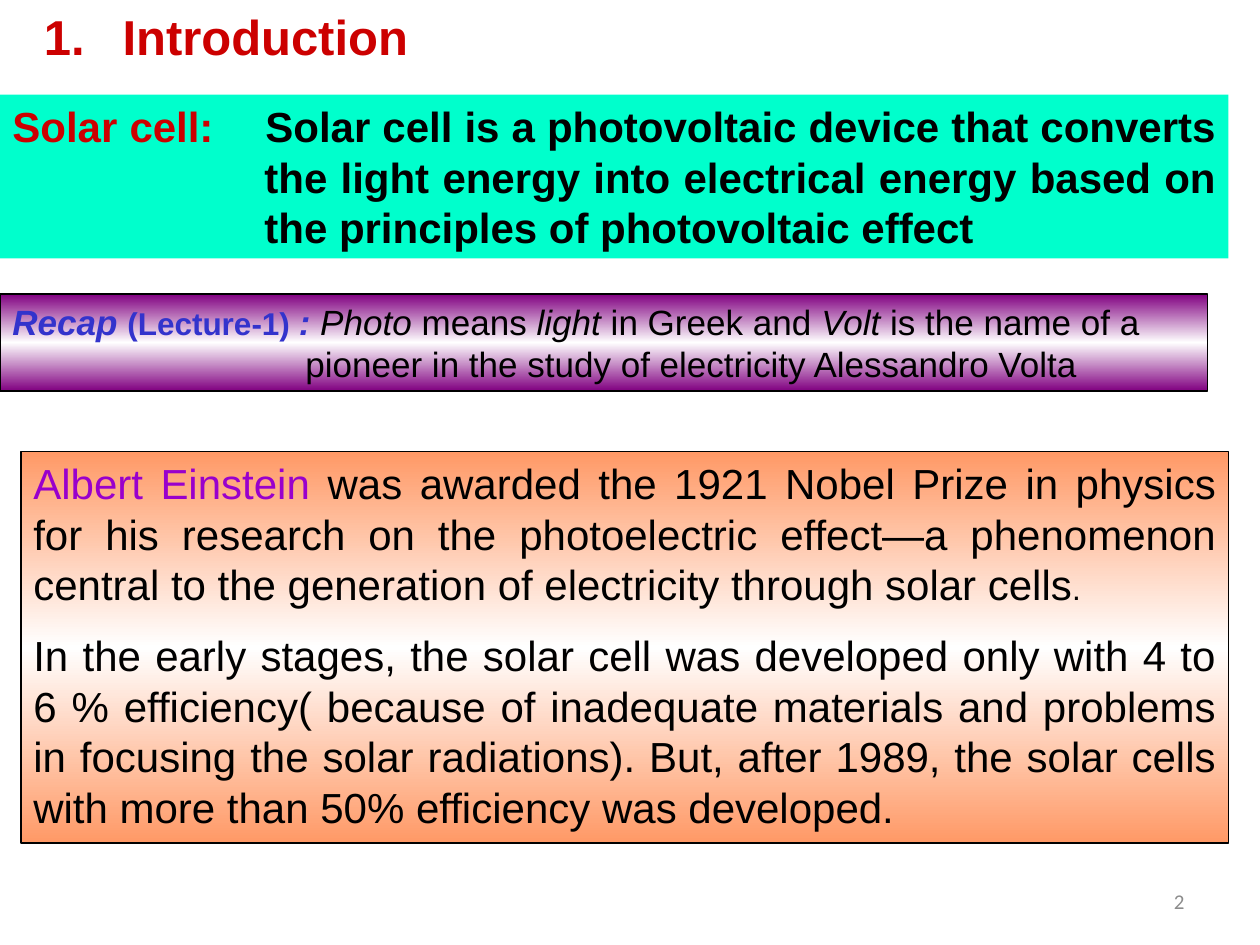
import copy

import pptx
import pptx.dml.color
import pptx.enum.shapes
import pptx.enum.text
import pptx.oxml.ns
import pptx.util

Pt = pptx.util.Pt
ALIGN = pptx.enum.text.PP_ALIGN
ANCHOR = pptx.enum.text.MSO_ANCHOR
AUTO = pptx.enum.text.MSO_AUTO_SIZE
RECT = pptx.enum.shapes.MSO_SHAPE.RECTANGLE

BLACK, RED, BLUE, PURPLE = "000000", "CC0000", "3333CC", "9900CC"


def rgb(value):
    return pptx.dml.color.RGBColor.from_string(value)


def set_gradient(s, edge, middle):
    """Fill from edge to middle and back to edge, top to bottom."""
    s.fill.gradient()
    s.fill.gradient_angle = 270
    stops = s._element.spPr.find(".//" + pptx.oxml.ns.qn("a:gsLst"))
    stops.append(copy.deepcopy(stops[-1]))
    for stop, place, color in zip(s.fill.gradient_stops, (0, 0.5, 1), (edge, middle, edge)):
        stop.position = place
        stop.color.rgb = rgb(color)


def add_box(slide, place, fill=None, gradient=None):
    s = slide.shapes.add_shape(RECT, *map(Pt, place))
    s.shadow.inherit = False
    if gradient:
        set_gradient(s, *gradient)
        s.line.color.rgb = rgb(BLACK)
        s.line.width = Pt(0.75)
    else:
        s.fill.solid()
        s.fill.fore_color.rgb = rgb(fill)
        s.line.fill.background()
    return s


def add_label(slide, place):
    return slide.shapes.add_textbox(*map(Pt, place))


def set_frame(s, anchor=ANCHOR.TOP, auto_size=AUTO.SHAPE_TO_FIT_TEXT):
    tf = s.text_frame
    for name, value in dict(word_wrap=True, vertical_anchor=anchor, auto_size=auto_size).items():
        setattr(tf, name, value)
    return tf


def write(p, runs, align=ALIGN.LEFT, hanging=0, before=0, **base):
    """Write (text, changes) runs; base holds the format they share."""
    p.alignment = align
    p.space_before = Pt(before)
    if hanging:
        pPr = p._p.get_or_add_pPr()
        pPr.set("marL", str(Pt(hanging)))
        pPr.set("indent", str(-Pt(hanging)))
    for text, changes in runs:
        r = p.add_run()
        r.text = text
        look = {"name": "Arial", "color": BLACK, **base, **changes}
        r.font.color.rgb = rgb(look.pop("color"))
        look["size"] = Pt(look["size"])
        for name, value in look.items():
            setattr(r.font, name, value)


def main():
    prs = pptx.Presentation()
    prs.slide_width, prs.slide_height = Pt(720), Pt(540)
    slide = prs.slides.add_slide(prs.slide_layouts[6])

    # Slide number
    tf = set_frame(add_label(slide, (516, 500.5, 168, 28.75)), ANCHOR.MIDDLE, AUTO.NONE)
    write(tf.paragraphs[0], [("2", {})], ALIGN.RIGHT, name="Calibri", size=12, color="8C8C8C")

    # Recap
    recap = add_box(slide, (0, 168, 690, 55.5), gradient=("800080", "FFFFFF"))
    tf = set_frame(recap, ANCHOR.MIDDLE)
    lead = {"color": BLUE, "bold": True}
    italic = {"italic": True}
    write(tf.paragraphs[0], [
        ("Recap ", {**lead, **italic}),
        ("(Lecture-1) ", {**lead, "size": 18}),
        (":", {**lead, **italic}),
        (" Photo", italic),
        (" means ", {}),
        ("light", italic),
        (" in Greek and ", {}),
        ("Volt ", italic),
        ("is the name of a pioneer in the study of electricity Alessandro Volta", {}),
    ], hanging=167.5, size=20, bold=False, italic=False)

    # Definition
    tf = set_frame(add_box(slide, (0, 54, 702, 93.75), fill="00FFCC"))
    write(tf.paragraphs[0], [
        ("Solar cell: \t", {"color": RED}),
        ("Solar cell is a photovoltaic device that converts the light energy into "
         "electrical energy based on the principles of photovoltaic effect", {}),
    ], ALIGN.JUSTIFY, hanging=144, size=24, bold=True)

    # History
    tf = set_frame(add_box(slide, (12, 258, 690, 223.75), gradient=("FF9966", "FFFFFF")))
    write(tf.paragraphs[0], [
        ("Albert Einstein", {"color": PURPLE}),
        (" was awarded the 1921 Nobel Prize in physics for his research on the "
         "photoelectric effect—a phenomenon central to the generation of "
         "electricity through solar cells", {}),
        (".", {"size": 18}),
    ], ALIGN.JUSTIFY, size=24)
    write(tf.add_paragraph(), [
        ("In the early stages, the solar cell was developed only with 4 to 6 % "
         "efficiency( because of inadequate materials and problems in focusing the "
         "solar radiations). But, after 1989, the solar cells with more than 50% "
         "efficiency was developed. ", {}),
    ], ALIGN.JUSTIFY, before=12, size=24)

    # Title
    tf = set_frame(add_label(slide, (18, 0, 258, 41)))
    write(tf.paragraphs[0], [("1.\tIntroduction", {})], hanging=45, size=28, bold=True, color=RED)

    prs.save("out.pptx")


if __name__ == "__main__":
    main()
